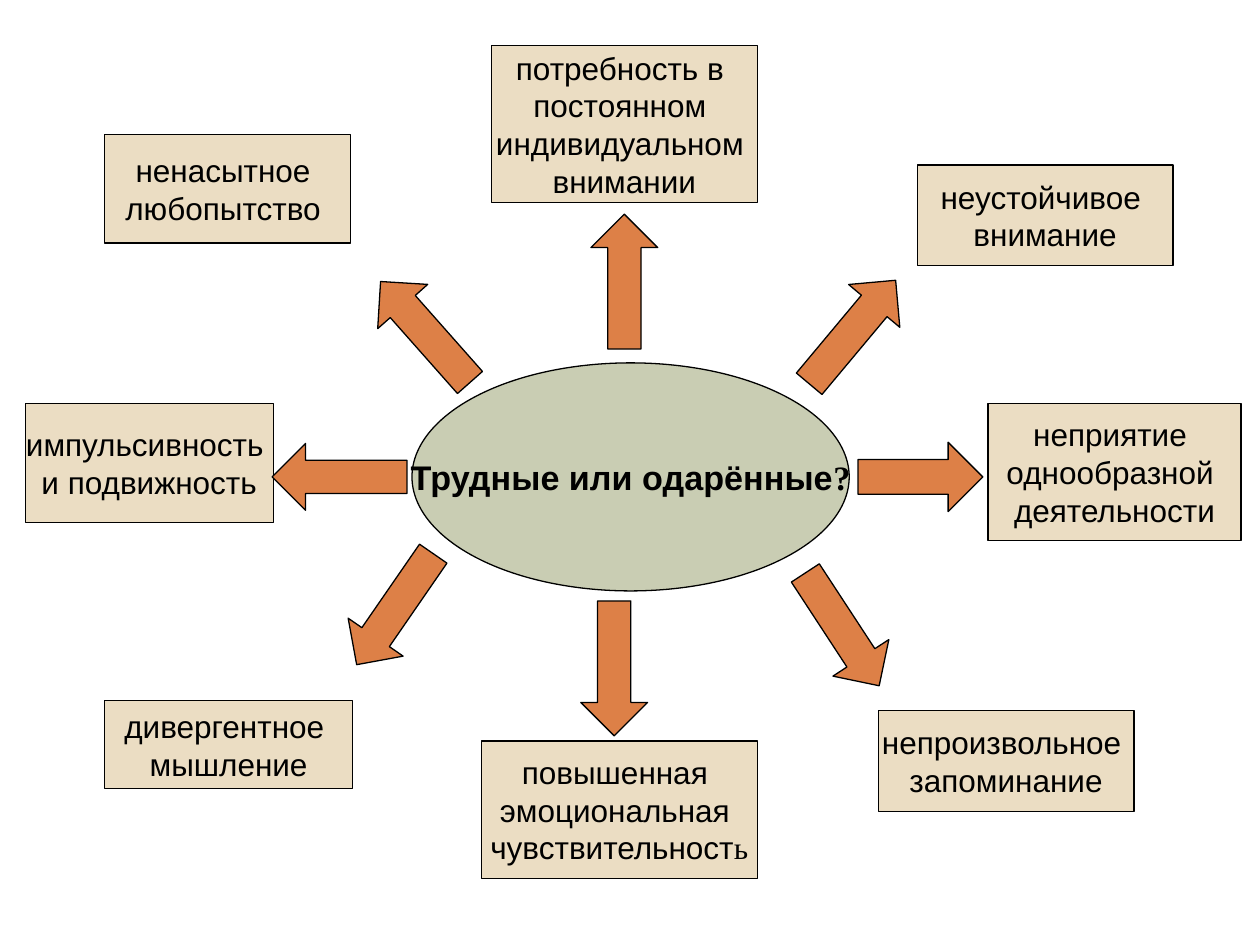
from dataclasses import dataclass

from pptx import Presentation
from pptx.dml.color import RGBColor
from pptx.enum.shapes import MSO_SHAPE
from pptx.enum.text import MSO_ANCHOR, PP_ALIGN
from pptx.util import Inches, Pt


@dataclass(frozen=True)
class Theme:
    center: str = "C9CDB3"
    trait: str = "EBDDC3"
    arrow: str = "DD8047"
    ink: str = "000000"
    sans: str = "Arial"
    serif: str = "Times New Roman"
    center_size: float = 19.5
    trait_size: float = 18
    line_width: float = 0.75


def write_text(tf, lines, size, color, font, bold=False):
    tf.word_wrap = False
    tf.vertical_anchor = MSO_ANCHOR.MIDDLE
    for i, line in enumerate(lines):
        p = tf.paragraphs[0] if i == 0 else tf.add_paragraph()
        p.alignment = PP_ALIGN.CENTER
        runs = [(line, font)] if isinstance(line, str) else line
        for text, name in runs:
            r = p.add_run()
            r.text = text
            r.font.name = name
            r.font.size = Pt(size)
            r.font.bold = bold
            r.font.color.rgb = RGBColor.from_string(color)


class Diagram:
    def __init__(self, s, theme):
        self.s = s
        self.theme = theme

    def shape(self, kind, box, fill):
        sp = self.s.shapes.add_shape(kind, *map(Inches, box))
        sp.shadow.inherit = False
        sp.fill.solid()
        sp.fill.fore_color.rgb = RGBColor.from_string(fill)
        sp.line.color.rgb = RGBColor.from_string(self.theme.ink)
        sp.line.width = Pt(self.theme.line_width)
        return sp

    def center(self, box, lines):
        t = self.theme
        sp = self.shape(MSO_SHAPE.OVAL, box, t.center)
        write_text(sp.text_frame, lines, t.center_size, t.ink, t.sans, bold=True)

    def trait(self, box, lines):
        t = self.theme
        sp = self.shape(MSO_SHAPE.RECTANGLE, box, t.trait)
        write_text(sp.text_frame, lines, t.trait_size, t.ink, t.sans)

    def arrow(self, left, top, rotation, width=0.53, height=1.07):
        sp = self.shape(MSO_SHAPE.DOWN_ARROW, (left, top, width, height), self.theme.arrow)
        sp.adjustments[0] = 0.5
        sp.adjustments[1] = 0.5
        sp.rotation = rotation


def main():
    prs = Presentation()
    prs.slide_width, prs.slide_height = Inches(10), Inches(7.5)
    theme = Theme()
    diagram = Diagram(prs.slides.add_slide(prs.slide_layouts[6]), theme)

    diagram.center(
        (3.27, 2.88, 3.47, 1.81),
        [[("Трудные или одарённые", theme.sans), ("?", theme.serif)]],
    )

    traits = [
        ((3.9, 0.36, 2.11, 1.25),
         ["потребность в ", "постоянном ", "индивидуальном ", "внимании"]),
        ((7.28, 1.31, 2.03, 0.8), ["неустойчивое ", "внимание"]),
        ((7.84, 3.2, 2.01, 1.09), ["неприятие ", "однообразной ", "деятельности"]),
        ((6.97, 5.64, 2.03, 0.8), ["непроизвольное ", "запоминание"]),
        ((3.82, 5.88, 2.19, 1.09),
         ["повышенная ", "эмоциональная ",
          [("чувствительност", theme.sans), ("ь", theme.serif)]]),
        ((0.83, 5.56, 1.97, 0.7), ["дивергентное ", "мышление"]),
        ((0.2, 3.2, 1.97, 0.95), ["импульсивность ", "и подвижность"]),
        ((0.83, 1.07, 1.95, 0.86), ["ненасытное ", "любопытство "]),
    ]
    for box, lines in traits:
        diagram.trait(box, lines)

    arrows = [
        (4.69, 1.7, 180),
        (6.5, 2.1, 219.9),
        (7.03, 3.29, 270, 0.55, 0.99),
        (6.42, 4.46, 326.8),
        (4.61, 4.77, 0),
        (2.87, 4.3, 34.6),
        (2.43, 3.25, 90),
        (3.11, 2.1, 138.5),
    ]
    for arrow in arrows:
        diagram.arrow(*arrow)

    prs.save("out.pptx")


if __name__ == "__main__":
    main()
